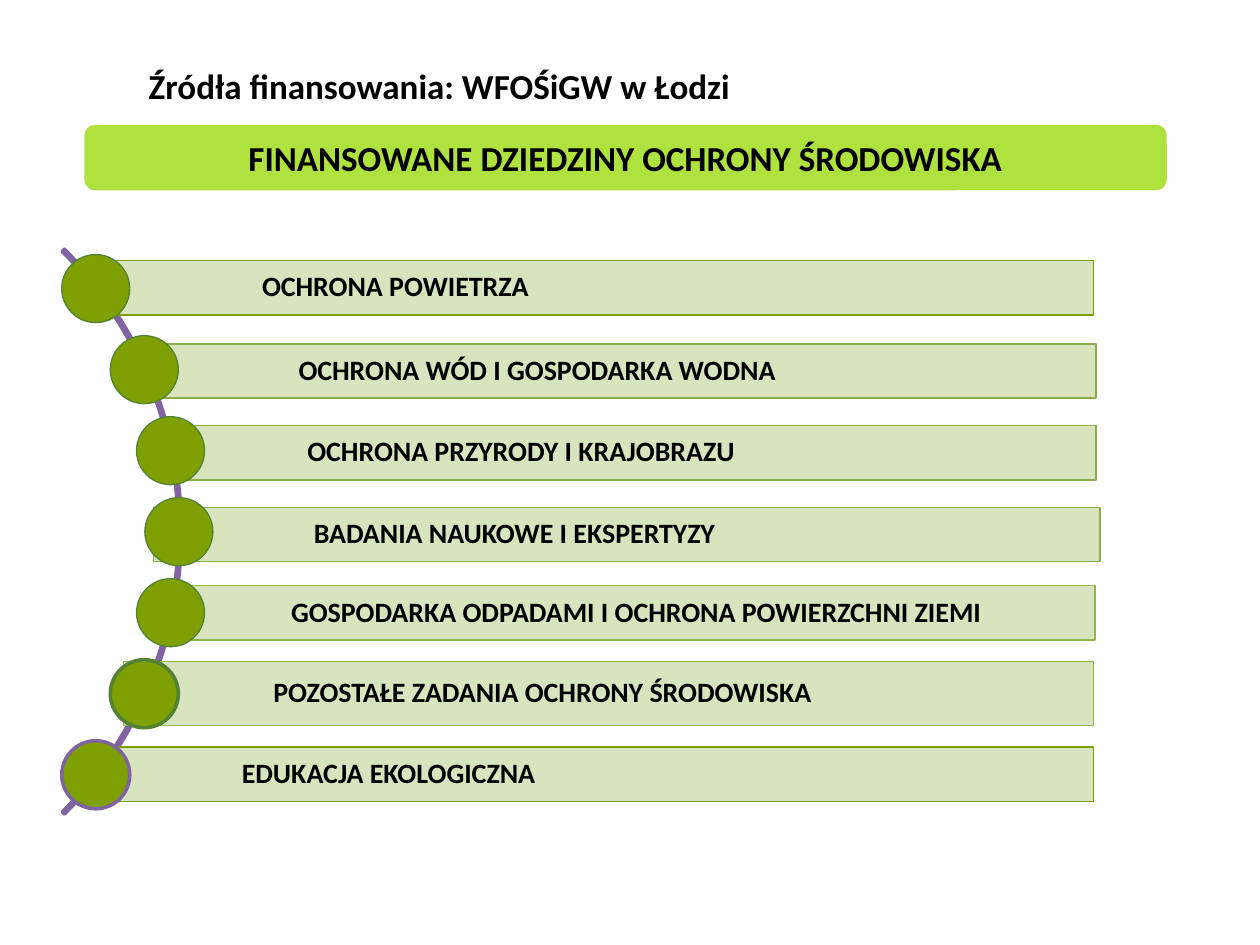
"""Build the slide listing the environmental fields financed by WFOŚiGW in Łódź."""
from dataclasses import dataclass
from math import sqrt

from pptx import Presentation
from pptx.dml.color import RGBColor
from pptx.enum.shapes import MSO_SHAPE as Preset
from pptx.enum.text import MSO_ANCHOR as Anchor, PP_ALIGN as Align
from pptx.shapes.autoshape import Shape
from pptx.slide import Slide
from pptx.util import Inches, Pt

BLACK, PURPLE, DARK_GREEN = "000000", "8064A2", "548235"
OLIVE, PALE_GREEN, LIME = "7EA002", "D7E4BD", "AFE13F"
ARC_X, ARC_Y, ARC_RADIUS = -1.73, 4.22, 3.17
DOT_SIZE, DOT_RADIUS, DOT_STEP = 0.54, 3.15, 0.643


@dataclass(frozen=True)
class Field:
    """A financed field with its bar and dot."""
    label: str
    left: float
    top: float
    width: float
    text_left: float
    bar_line: str
    height: float = 0.43
    dot_line: str = DARK_GREEN
    dot_weight: float = 0.75


FIELDS = [
    Field("OCHRONA POWIETRZA", 0.61, 2.07, 8.07, 2.08, OLIVE),
    Field("OCHRONA WÓD I GOSPODARKA WODNA", 1.26, 2.73, 7.44, 2.37, "8CAE48"),
    Field("OCHRONA PRZYRODY I KRAJOBRAZU", 1.33, 3.38, 7.37, 2.44, "8CAE48"),
    Field("BADANIA NAUKOWE I EKSPERTYZY", 1.22, 4.03, 7.51, 2.49, "8CAE48"),
    Field("GOSPODARKA ODPADAMI I OCHRONA POWIERZCHNI ZIEMI",
          1.2, 4.65, 7.49, 2.31, "92B54B"),
    Field("POZOSTAŁE ZADANIA OCHRONY ŚRODOWISKA",
          0.98, 5.25, 7.7, 2.17, "92B54B", height=0.51, dot_weight=2),
    Field("EDUKACJA EKOLOGICZNA", 0.61, 5.93, 8.07, 1.92, OLIVE,
          dot_line=PURPLE, dot_weight=2),
]


def color(value: str) -> RGBColor:
    """Turn a hex string into a colour."""
    return RGBColor.from_string(value)


def add_preset(slide: Slide, preset: Preset, left: float, top: float,
               width: float, height: float, fill: str | None = None,
               line: str | None = None, weight: float = 0.75) -> Shape:
    """Draw a flat preset shape."""
    shape = slide.shapes.add_shape(
        preset, Inches(left), Inches(top), Inches(width), Inches(height))
    shape.shadow.inherit = False
    if fill:
        shape.fill.solid()
        shape.fill.fore_color.rgb = color(fill)
    else:
        shape.fill.background()
    if line:
        shape.line.color.rgb = color(line)
        shape.line.width = Pt(weight)
    else:
        shape.line.fill.background()
    return shape


def write(shape: Shape, text: str, size: float, align: Align = Align.LEFT) -> None:
    """Set bold black text, centred vertically."""
    frame = shape.text_frame
    frame.text = text
    frame.vertical_anchor = Anchor.MIDDLE
    paragraph = frame.paragraphs[0]
    paragraph.alignment = align
    font = paragraph.runs[0].font
    font.name, font.size, font.bold = "Calibri", Pt(size), True
    font.color.rgb = color(BLACK)


def add_field(slide: Slide, field: Field, offset: float) -> None:
    """Draw a labelled bar and its dot on the arc, offset from the arc's middle."""
    bar = add_preset(slide, Preset.RECTANGLE, field.left, field.top, field.width,
                     field.height, PALE_GREEN, field.bar_line)
    write(bar, field.label, 16)
    frame = bar.text_frame
    frame.margin_left = Inches(field.text_left - field.left)
    frame.margin_top = frame.margin_right = frame.margin_bottom = Inches(0.04)
    frame.paragraphs[0].line_spacing = 0.9
    center_x = ARC_X + sqrt(DOT_RADIUS ** 2 - offset ** 2)
    add_preset(slide, Preset.OVAL, center_x - DOT_SIZE / 2,
               ARC_Y + offset - DOT_SIZE / 2, DOT_SIZE, DOT_SIZE,
               OLIVE, field.dot_line, field.dot_weight)


def main() -> None:
    """Build and save the slide."""
    deck = Presentation()
    deck.slide_width, deck.slide_height = Inches(10), Inches(7.5)
    slide = deck.slides.add_slide(deck.slide_layouts[5])

    title = slide.shapes.title
    title.left, title.top = Inches(1.08), Inches(0.46)
    title.width, title.height = Inches(4.85), Inches(0.44)
    write(title, "Źródła finansowania: WFOŚiGW w Łodzi", 20)
    title.text_frame.word_wrap = False

    banner = add_preset(slide, Preset.ROUNDED_RECTANGLE, 0.67, 0.99, 8.59, 0.52, LIME)
    write(banner, "FINANSOWANE DZIEDZINY OCHRONY ŚRODOWISKA", 20, Align.CENTER)

    arc = add_preset(slide, Preset.BLOCK_ARC, ARC_X - ARC_RADIUS, ARC_Y - ARC_RADIUS,
                     2 * ARC_RADIUS, 2 * ARC_RADIUS, line=PURPLE, weight=2)
    for index, adjustment in enumerate((189, 27, 0.004)):
        arc.adjustments[index] = adjustment

    middle = (len(FIELDS) - 1) / 2
    for index, field in enumerate(FIELDS):
        add_field(slide, field, (index - middle) * DOT_STEP)

    deck.save("out.pptx")


if __name__ == "__main__":
    main()
